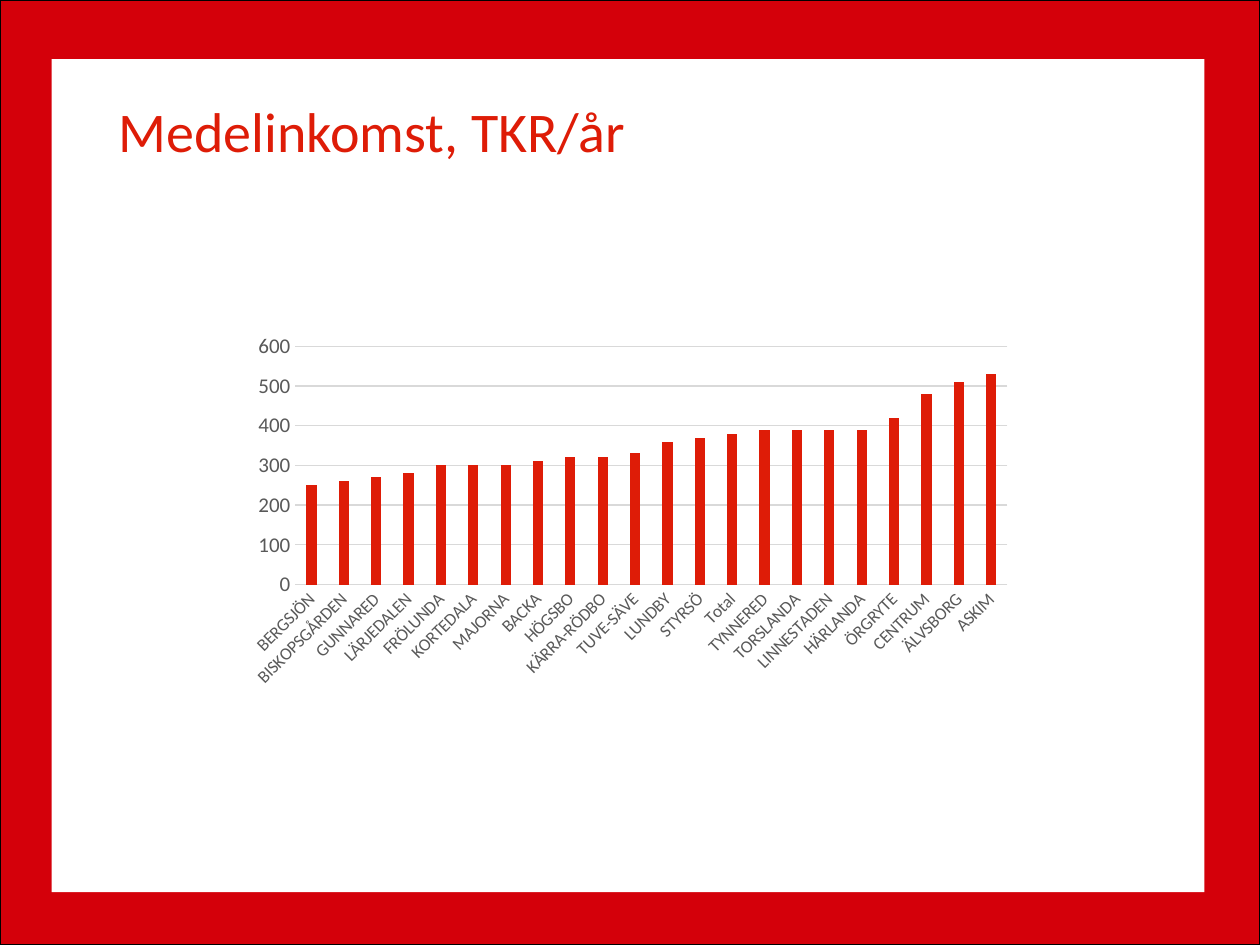
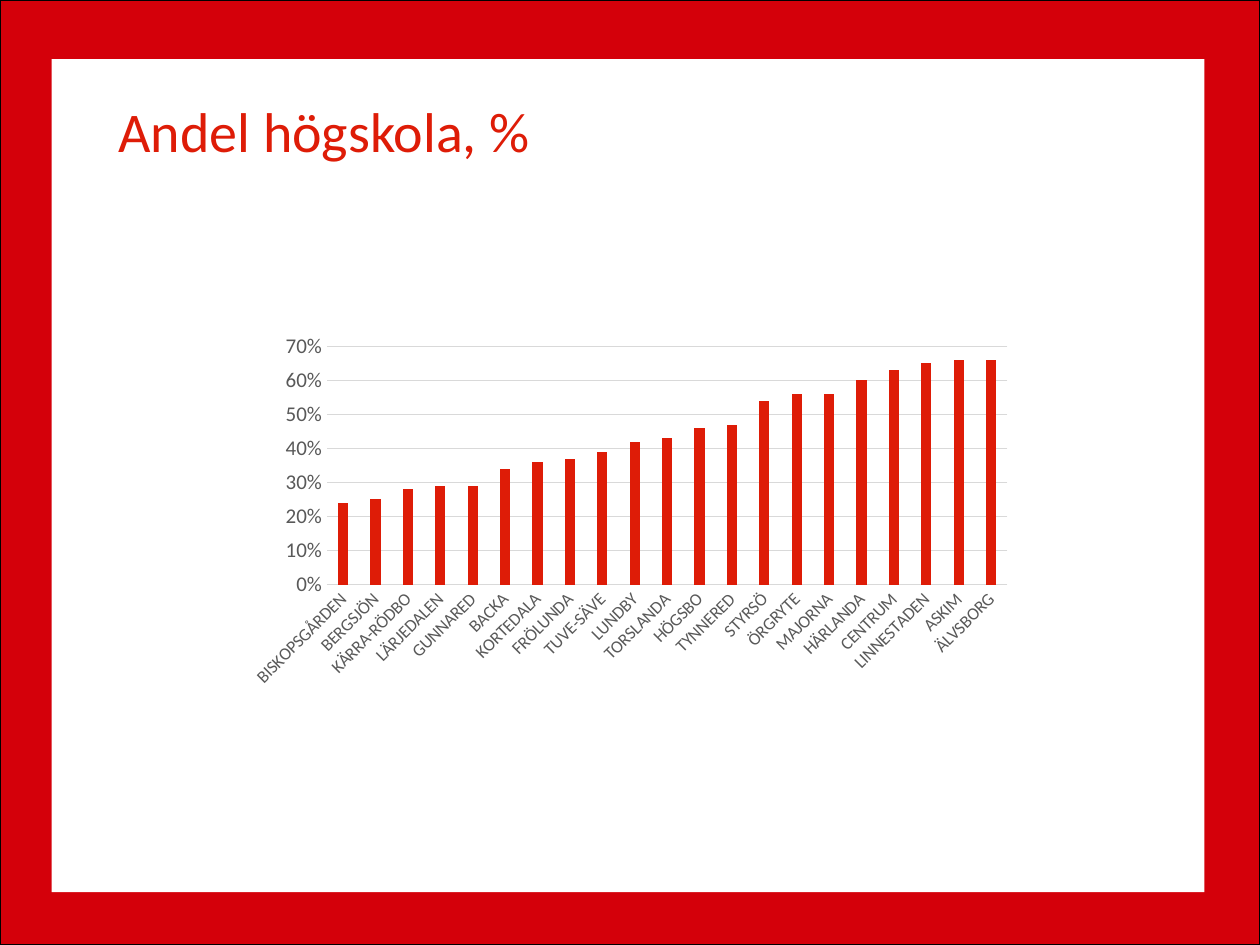
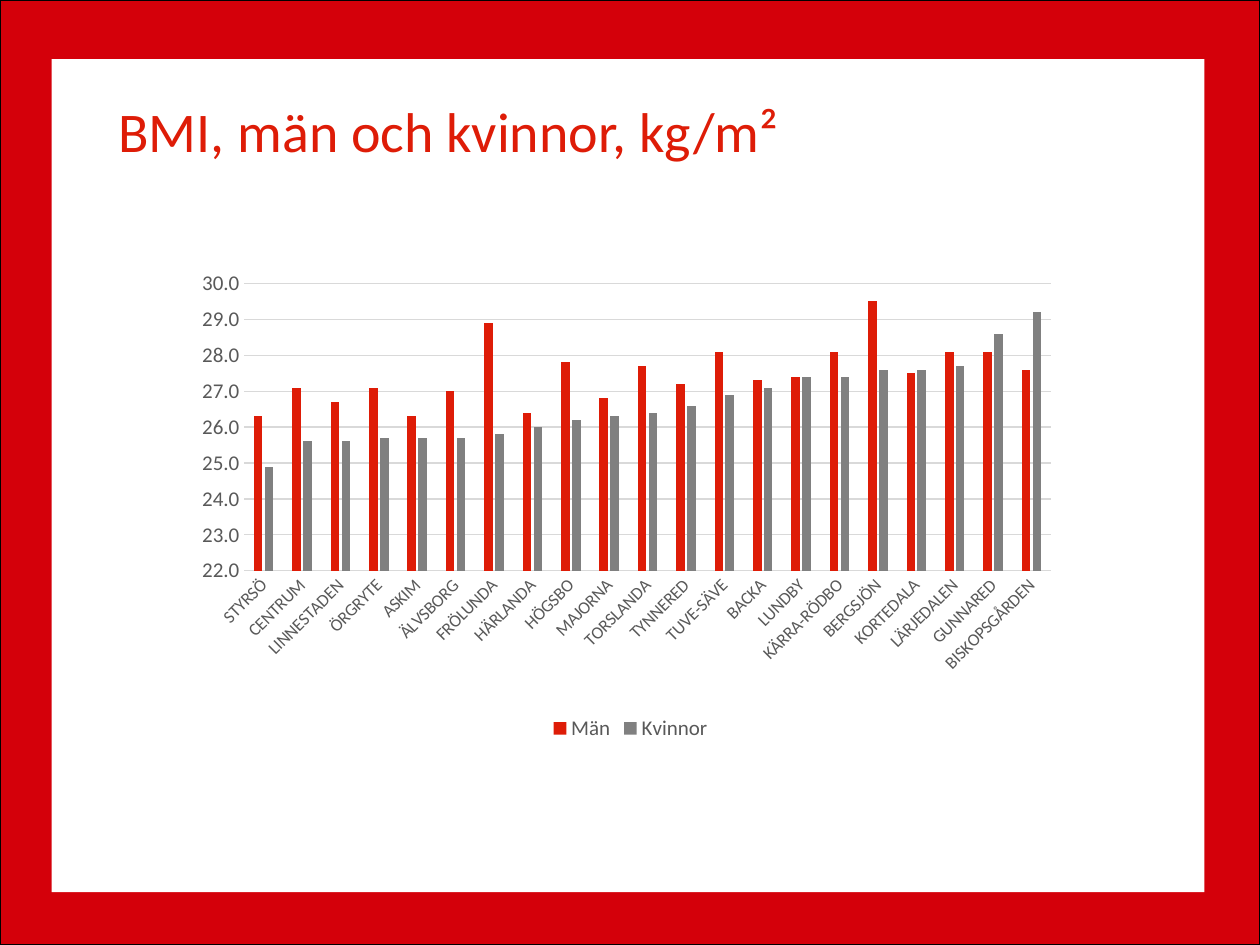
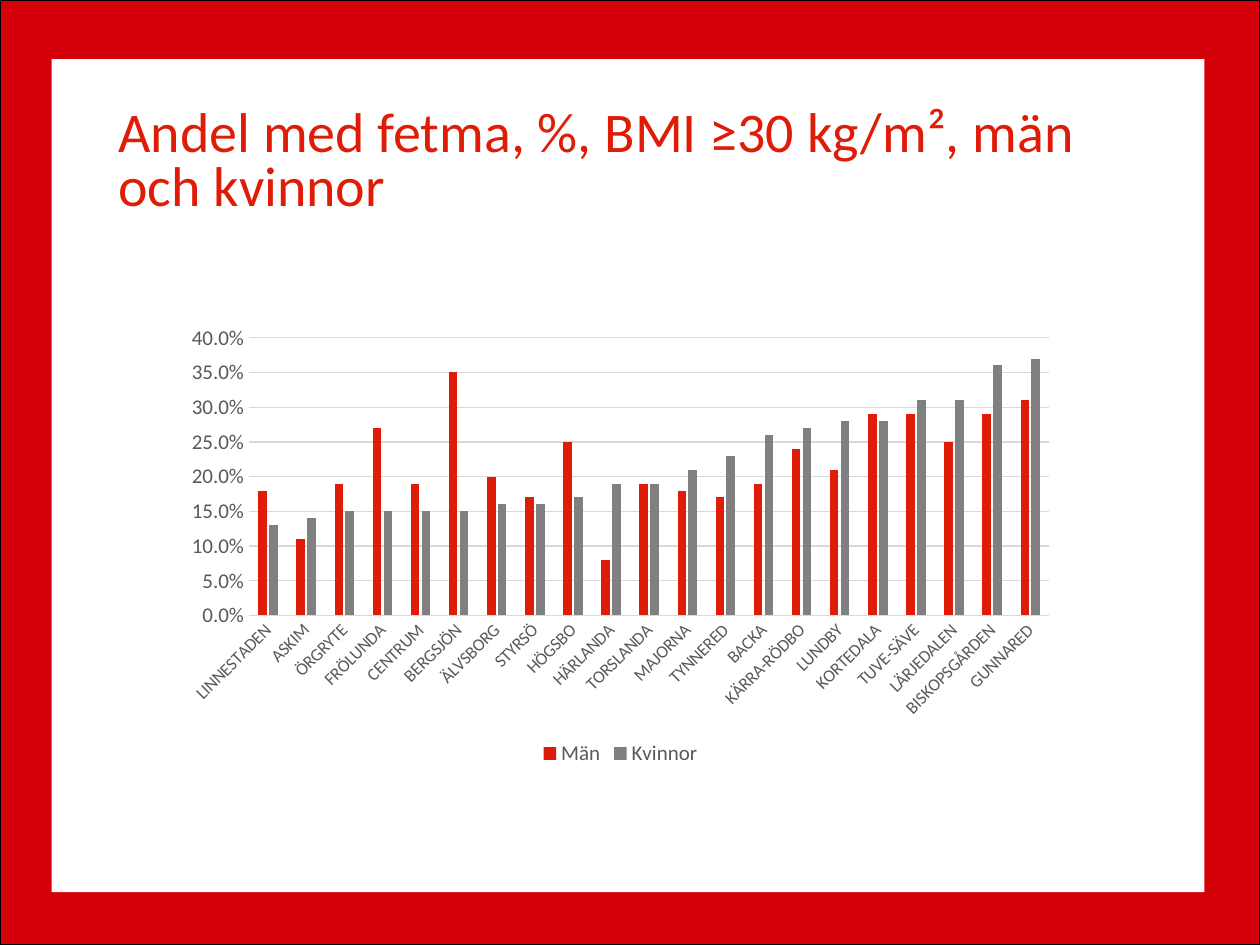
from lxml import etree
from pptx import Presentation
from pptx.chart.data import CategoryChartData
from pptx.dml.color import RGBColor
from pptx.enum.chart import XL_CHART_TYPE, XL_LEGEND_POSITION, XL_TICK_MARK
from pptx.enum.shapes import MSO_SHAPE
from pptx.enum.text import MSO_ANCHOR, MSO_AUTO_SIZE, PP_ALIGN
from pptx.oxml import parse_xml
from pptx.oxml.ns import nsdecls
from pptx.util import Inches, Pt

FONT = "Calibri"
FRAME_RED = RGBColor(0xD4, 0x00, 0x0A)
RED = RGBColor(0xDE, 0x1C, 0x07)
GRAY = RGBColor(0x80, 0x80, 0x80)
LABEL_GRAY = RGBColor(0x59, 0x59, 0x59)
GRID_GRAY = RGBColor(0xD9, 0xD9, 0xD9)
WHITE = RGBColor(0xFF, 0xFF, 0xFF)
BLACK = RGBColor(0x00, 0x00, 0x00)

# Content: scale is (minimum, maximum, step); rows are (district, one value per series);
# box and plot are (left, top, width, height) in inches, plot counted from the box
SLIDES = [
    dict(
        title="Medelinkomst, TKR/år", box=(1.88, 2.59, 6.24, 2.92),
        scale=(0, 600, 100), format="###0", series=["Series 1"],
        rows=[
            ("BERGSJÖN", 250), ("BISKOPSGÅRDEN", 260), ("GUNNARED", 270),
            ("LÄRJEDALEN", 280), ("FRÖLUNDA", 300), ("KORTEDALA", 300),
            ("MAJORNA", 300), ("BACKA", 310), ("HÖGSBO", 320),
            ("KÄRRA-RÖDBO", 320), ("TUVE-SÄVE", 330), ("LUNDBY", 360),
            ("STYRSÖ", 370), ("Total", 380), ("TYNNERED", 390),
            ("TORSLANDA", 390), ("LINNESTADEN", 390), ("HÄRLANDA", 390),
            ("ÖRGRYTE", 420), ("CENTRUM", 480), ("ÄLVSBORG", 510), ("ASKIM", 530),
        ],
    ),
    dict(
        title="Andel högskola, %", box=(1.88, 2.59, 6.24, 2.92),
        scale=(0, 0.7, 0.1), format="0%", series=["Series 1"],
        rows=[
            ("BISKOPSGÅRDEN", 0.24), ("BERGSJÖN", 0.25), ("KÄRRA-RÖDBO", 0.28),
            ("LÄRJEDALEN", 0.29), ("GUNNARED", 0.29), ("BACKA", 0.34),
            ("KORTEDALA", 0.36), ("FRÖLUNDA", 0.37), ("TUVE-SÄVE", 0.39),
            ("LUNDBY", 0.42), ("TORSLANDA", 0.43), ("HÖGSBO", 0.46),
            ("TYNNERED", 0.47), ("STYRSÖ", 0.54), ("ÖRGRYTE", 0.56),
            ("MAJORNA", 0.56), ("HÄRLANDA", 0.6), ("CENTRUM", 0.63),
            ("LINNESTADEN", 0.65), ("ASKIM", 0.66), ("ÄLVSBORG", 0.66),
        ],
    ),
    dict(
        title="BMI, män och kvinnor, kg/m²", box=(1.46, 2.12, 7.09, 3.8),
        scale=(22, 30, 1), format="###0.0", series=["Män", "Kvinnor"],
        plot=(0.48, 0.13, 6.4, 2.28),
        rows=[
            ("STYRSÖ", 26.3, 24.9), ("CENTRUM", 27.1, 25.6),
            ("LINNESTADEN", 26.7, 25.6), ("ÖRGRYTE", 27.1, 25.7),
            ("ASKIM", 26.3, 25.7), ("ÄLVSBORG", 27, 25.7),
            ("FRÖLUNDA", 28.9, 25.8), ("HÄRLANDA", 26.4, 26),
            ("HÖGSBO", 27.8, 26.2), ("MAJORNA", 26.8, 26.3),
            ("TORSLANDA", 27.7, 26.4), ("TYNNERED", 27.2, 26.6),
            ("TUVE-SÄVE", 28.1, 26.9), ("BACKA", 27.3, 27.1),
            ("LUNDBY", 27.4, 27.4), ("KÄRRA-RÖDBO", 28.1, 27.4),
            ("BERGSJÖN", 29.5, 27.6), ("KORTEDALA", 27.5, 27.6),
            ("LÄRJEDALEN", 28.1, 27.7), ("GUNNARED", 28.1, 28.6),
            ("BISKOPSGÅRDEN", 27.6, 29.2),
        ],
    ),
    dict(
        title="Andel med fetma, %, BMI ≥30 kg/m², män och kvinnor",
        box=(1.38, 2.51, 7.09, 3.61),
        scale=(0, 0.4, 0.05), format="###0.0%", series=["Män", "Kvinnor"],
        rows=[
            ("LINNESTADEN", 0.18, 0.13), ("ASKIM", 0.11, 0.14),
            ("ÖRGRYTE", 0.19, 0.15), ("FRÖLUNDA", 0.27, 0.15),
            ("CENTRUM", 0.19, 0.15), ("BERGSJÖN", 0.35, 0.15),
            ("ÄLVSBORG", 0.2, 0.16), ("STYRSÖ", 0.17, 0.16),
            ("HÖGSBO", 0.25, 0.17), ("HÄRLANDA", 0.08, 0.19),
            ("TORSLANDA", 0.19, 0.19), ("MAJORNA", 0.18, 0.21),
            ("TYNNERED", 0.17, 0.23), ("BACKA", 0.19, 0.26),
            ("KÄRRA-RÖDBO", 0.24, 0.27), ("LUNDBY", 0.21, 0.28),
            ("KORTEDALA", 0.29, 0.28), ("TUVE-SÄVE", 0.29, 0.31),
            ("LÄRJEDALEN", 0.25, 0.31), ("BISKOPSGÅRDEN", 0.29, 0.36),
            ("GUNNARED", 0.31, 0.37),
        ],
    ),
]


def inches(box):
    return [Inches(length) for length in box]


def style_font(font, size, color):
    font.name, font.size, font.color.rgb = FONT, Pt(size), color


def style_line(line, color):
    line.color.rgb, line.width = color, Pt(0.75)


def add_frame(slide):
    """Draw the red frame and move it to the layout, behind everything."""
    border = slide.shapes.add_shape(MSO_SHAPE.RECTANGLE, *inches((0, 0, 10, 7.5)))
    page = slide.shapes.add_shape(MSO_SHAPE.RECTANGLE, *inches((0.41, 0.47, 9.15, 6.61)))
    style_line(border.line, BLACK)
    page.line.fill.background()
    layout_tree = slide.slide_layout.shapes._spTree
    for position, (panel, color) in enumerate([(border, FRAME_RED), (page, WHITE)], 2):
        panel.shadow.inherit = False
        panel.fill.solid()
        panel.fill.fore_color.rgb = color
        layout_tree.insert(position, panel._element)


def set_title(slide, text):
    title = slide.shapes.title
    title.left, title.top, title.width, title.height = inches((0.84, 0.82, 8.34, 1))
    frame = title.text_frame
    frame.text = text
    frame.word_wrap = True
    frame.auto_size = MSO_AUTO_SIZE.NONE
    frame.vertical_anchor = MSO_ANCHOR.TOP
    paragraph = frame.paragraphs[0]
    paragraph.alignment = PP_ALIGN.LEFT
    paragraph.line_spacing = 0.8
    style_font(paragraph.runs[0].font, 32, RED)


def place_plot(chart, plot, box):
    """Fix the inner plot area, as fractions of the chart's size."""
    layout = parse_xml(f"<c:layout {nsdecls('c')}><c:manualLayout/></c:layout>")
    settings = {"layoutTarget": "inner", "xMode": "edge", "yMode": "edge"}
    for tag, length, whole in zip("xywh", plot, box[2:] * 2):
        settings[tag] = length / whole
    for tag, value in settings.items():
        etree.SubElement(layout[0], f"{{{layout.nsmap['c']}}}{tag}", val=str(value))
    chart._chartSpace.chart.plotArea.insert(0, layout)


def add_column_chart(slide, content):
    districts, *columns = zip(*content["rows"])
    data = CategoryChartData(number_format=content["format"])
    data.categories = districts
    for name, values in zip(content["series"], columns):
        data.add_series(name, values)
    chart = slide.shapes.add_chart(
        XL_CHART_TYPE.COLUMN_CLUSTERED, *inches(content["box"]), data).chart
    chart.has_title = False
    style_font(chart.font, 10, BLACK)

    # Columns
    columns_plot = chart.plots[0]
    columns_plot.vary_by_categories = False
    columns_plot.gap_width, columns_plot.overlap = 219, -27
    for series, color in zip(columns_plot.series, (RED, GRAY)):
        series.format.fill.solid()
        series.format.fill.fore_color.rgb = color

    # Axes
    districts_axis, values_axis = chart.category_axis, chart.value_axis
    for axis, size in ((districts_axis, 10), (values_axis, 12)):
        axis.major_tick_mark = axis.minor_tick_mark = XL_TICK_MARK.NONE
        style_font(axis.tick_labels.font, size, LABEL_GRAY)
    style_line(districts_axis.format.line, GRID_GRAY)
    districts_axis._element.txPr.bodyPr.set("rot", "-2700000")
    values_axis.format.line.fill.background()
    style_line(values_axis.major_gridlines.format.line, GRID_GRAY)
    values_axis.minimum_scale, values_axis.maximum_scale, values_axis.major_unit = content["scale"]
    values_axis.tick_labels.number_format = content["format"]
    values_axis.tick_labels.number_format_is_linked = False

    # Legend only where there are series to tell apart
    chart.has_legend = len(columns) > 1
    if chart.has_legend:
        chart.legend.position = XL_LEGEND_POSITION.BOTTOM
        chart.legend.include_in_layout = False
        style_font(chart.legend.font, 12, LABEL_GRAY)
    if "plot" in content:
        place_plot(chart, content["plot"], content["box"])


def main():
    deck = Presentation()
    deck.slide_width, deck.slide_height = Inches(10), Inches(7.5)
    title_only = deck.slide_layouts[5]
    for number, content in enumerate(SLIDES):
        slide = deck.slides.add_slide(title_only)
        if number == 0:
            add_frame(slide)
        set_title(slide, content["title"])
        add_column_chart(slide, content)
    deck.save("out.pptx")


if __name__ == "__main__":
    main()
